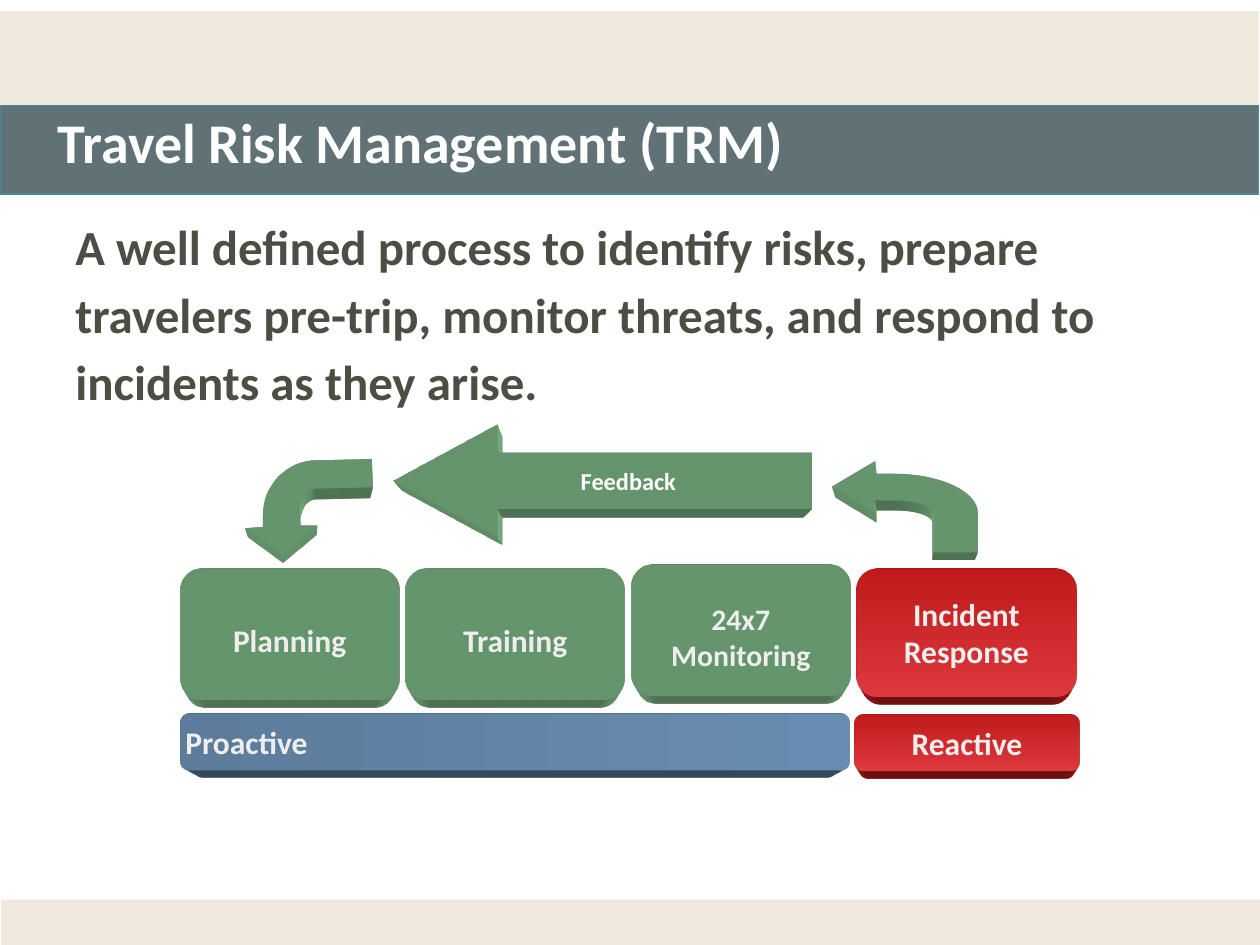
"""Build the Travel Risk Management process slide."""
from dataclasses import dataclass
from math import cos, radians, sin

from lxml import etree
from pptx import Presentation
from pptx.dml.color import RGBColor
from pptx.enum.shapes import MSO_SHAPE
from pptx.enum.text import MSO_ANCHOR, PP_ALIGN
from pptx.util import Cm, Pt

RECT, ROUNDED, LEFT_ARROW = MSO_SHAPE.RECTANGLE, MSO_SHAPE.ROUNDED_RECTANGLE, MSO_SHAPE.LEFT_ARROW
MIDDLE, TOP = MSO_ANCHOR.MIDDLE, MSO_ANCHOR.TOP
LEFT, CENTER = PP_ALIGN.LEFT, PP_ALIGN.CENTER
DRAWING = "http://schemas.openxmlformats.org/drawingml/2006/main"
DEPTH = """<a:spPr xmlns:a="{ns}">
<a:scene3d><a:camera prst="legacyPerspectiveBottom"/><a:lightRig rig="legacyFlat3" dir="t"/></a:scene3d>
<a:sp3d extrusionH="430200" prstMaterial="legacyMatte">
<a:bevelT w="13500" h="13500" prst="angle"/><a:bevelB w="13500" h="13500" prst="angle"/>
<a:extrusionClr><a:srgbClr val="{color}"/></a:extrusionClr></a:sp3d></a:spPr>"""


@dataclass(frozen=True)
class Theme:
    font: str = "Calibri"
    sand: str = "EEE8DD"
    slate: str = "607275"
    slate_edge: str = "438A9F"
    white: str = "FFFFFF"
    body: str = "4E4D43"
    label: str = "EEEEEE"
    green: str = "84C28D"
    red: tuple = ("C01B1B", "DD393E")
    blue: tuple = ("5E7D9C", "698DB2")
    title_size: int = 32
    body_size: int = 28
    feedback_size: int = 24
    label_size: int = 18
    small_label_size: int = 17


def inches(value):
    return Cm(value * 2.54)


def arc(cx, cy, rx, ry, start, end, steps=16):
    angles = [radians(start + (end - start) * i / steps) for i in range(steps + 1)]
    return [(cx + rx * cos(angle), cy - ry * sin(angle)) for angle in angles]


class SlideBuilder:
    def __init__(self, slide, theme):
        self.slide = slide
        self.theme = theme

    def paint(self, shape, fill, angle=270):
        shape.shadow.inherit = False
        shape.line.fill.background()
        if isinstance(fill, tuple):
            shape.fill.gradient()
            shape.fill.gradient_angle = angle
            for stop, color in zip(shape.fill.gradient_stops, fill):
                stop.color.rgb = RGBColor.from_string(color)
        else:
            shape.fill.solid()
            shape.fill.fore_color.rgb = RGBColor.from_string(fill)

    def extrude(self, shape, fill):
        color = fill[0] if isinstance(fill, tuple) else fill
        for element in list(etree.fromstring(DEPTH.format(ns=DRAWING, color=color))):
            shape._element.spPr.append(element)

    def set_text(self, shape, lines, size, color, align=CENTER, anchor=MIDDLE,
                 insets=(0.1, 0.05, 0.1, 0.05), spacing=None, wrap=True):
        frame = shape.text_frame
        frame.word_wrap = wrap
        frame.vertical_anchor = anchor
        frame.margin_left, frame.margin_top, frame.margin_right, frame.margin_bottom = map(inches, insets)
        frame.text = "\n".join(lines)
        for paragraph in frame.paragraphs:
            paragraph.alignment = align
            paragraph.line_spacing = spacing
            font = paragraph.font
            font.name, font.size, font.bold = self.theme.font, Pt(size), True
            font.color.rgb = RGBColor.from_string(color)

    def band(self, left, top, height, fill, edge=None):
        band = self.slide.shapes.add_shape(RECT, *map(inches, (left, top, 9.99, height)))
        self.paint(band, fill)
        if edge:
            band.line.color.rgb = RGBColor.from_string(edge)
            band.line.width = Pt(0.75)

    def text(self, box, content, size, color, **style):
        textbox = self.slide.shapes.add_textbox(*map(inches, box))
        self.set_text(textbox, [content], size, color, align=LEFT, **style)

    def block(self, box, lines, fill, kind=ROUNDED, angle=270, size=None, color=None, **style):
        block = self.slide.shapes.add_shape(kind, *map(inches, box))
        self.paint(block, fill, angle)
        self.extrude(block, fill)
        self.set_text(block, lines, size or self.theme.label_size, color or self.theme.label, **style)
        return block

    def bent_arrow(self, points, fill):
        start, *rest = [(inches(x), inches(y)) for x, y in points]
        builder = self.slide.shapes.build_freeform(*start, scale=1.0)
        builder.add_line_segments(rest, close=True)
        arrow = builder.convert_to_shape()
        self.paint(arrow, fill)
        self.extrude(arrow, fill)


def main():
    theme = Theme()
    deck = Presentation()
    deck.slide_width, deck.slide_height = inches(10), inches(7.5)
    page = SlideBuilder(deck.slides.add_slide(deck.slide_layouts[6]), theme)

    page.band(0, 0.09, 1.3, theme.sand)
    page.band(0, 0.84, 0.7, theme.slate, theme.slate_edge)
    page.band(0.01, 7.14, 0.36, theme.sand)
    page.text((0.36, 0.78, 8.87, 0.87), "Travel Risk Management (TRM)",
              theme.title_size, theme.white, spacing=Pt(25))
    page.text((0.5, 1.6, 9, 4.95),
              "A well defined process to identify risks, prepare travelers pre-trip, "
              "monitor threats, and respond to incidents as they arise.",
              theme.body_size, theme.body, anchor=TOP, spacing=1.15)

    from_response = [(6.61, 3.86), (6.95, 3.66), (6.95, 3.76),
                     *arc(7.1, 4.07, 0.66, 0.31, 90, 0), (7.76, 4.38), (7.41, 4.38),
                     *arc(7.1, 4.07, 0.31, 0.1, 0, 90), (6.95, 3.97), (6.95, 4.07)]
    page.bent_arrow(from_response, theme.green)

    page.block((1.43, 5.66, 5.31, 0.45), ["Proactive"], theme.blue, angle=0,
               align=LEFT, insets=(0.02, 0, 0.2, 0))
    page.block((6.78, 5.67, 1.79, 0.45), ["Reactive"], theme.red, insets=(0.2, 0, 0.2, 0))

    stages = [
        (4.51, 1.04, ["Planning"], theme.green, theme.label_size, 0.1),
        (4.51, 1.04, ["Training"], theme.green, theme.label_size, 0.1),
        (4.48, 1.04, ["24x7", "Monitoring"], theme.green, theme.small_label_size, 0.1),
        (4.51, 1.02, ["Incident", "Response"], theme.red, theme.label_size, 0),
    ]
    for index, (top, height, lines, fill, size, drop) in enumerate(stages):
        page.block((1.43 + 1.79 * index, top, 1.74, height), lines, fill,
                   size=size, insets=(0.2, drop, 0.2, 0))

    feedback = page.block((3.12, 3.37, 3.32, 0.89), ["Feedback"], theme.green, kind=LEFT_ARROW,
                          size=theme.feedback_size, color=theme.white,
                          insets=(0.1, 0, 0.1, 0.2), spacing=0.7, wrap=False)
    feedback.adjustments[1] = 0.93
    feedback.text_frame.paragraphs[0].runs[0]._r.get_or_add_rPr().set("baseline", "-25000")

    to_planning = [(2.24, 4.4), (1.95, 4.19), (2.09, 4.18),
                   *arc(2.51, 4.09, 0.42, 0.43, 180, 90), (2.95, 3.65), (2.96, 3.87),
                   *arc(2.51, 4.08, 0.13, 0.2, 90, 180), (2.39, 4.17), (2.52, 4.17)]
    page.bent_arrow(to_planning, theme.green)

    deck.save("out.pptx")


if __name__ == "__main__":
    main()
